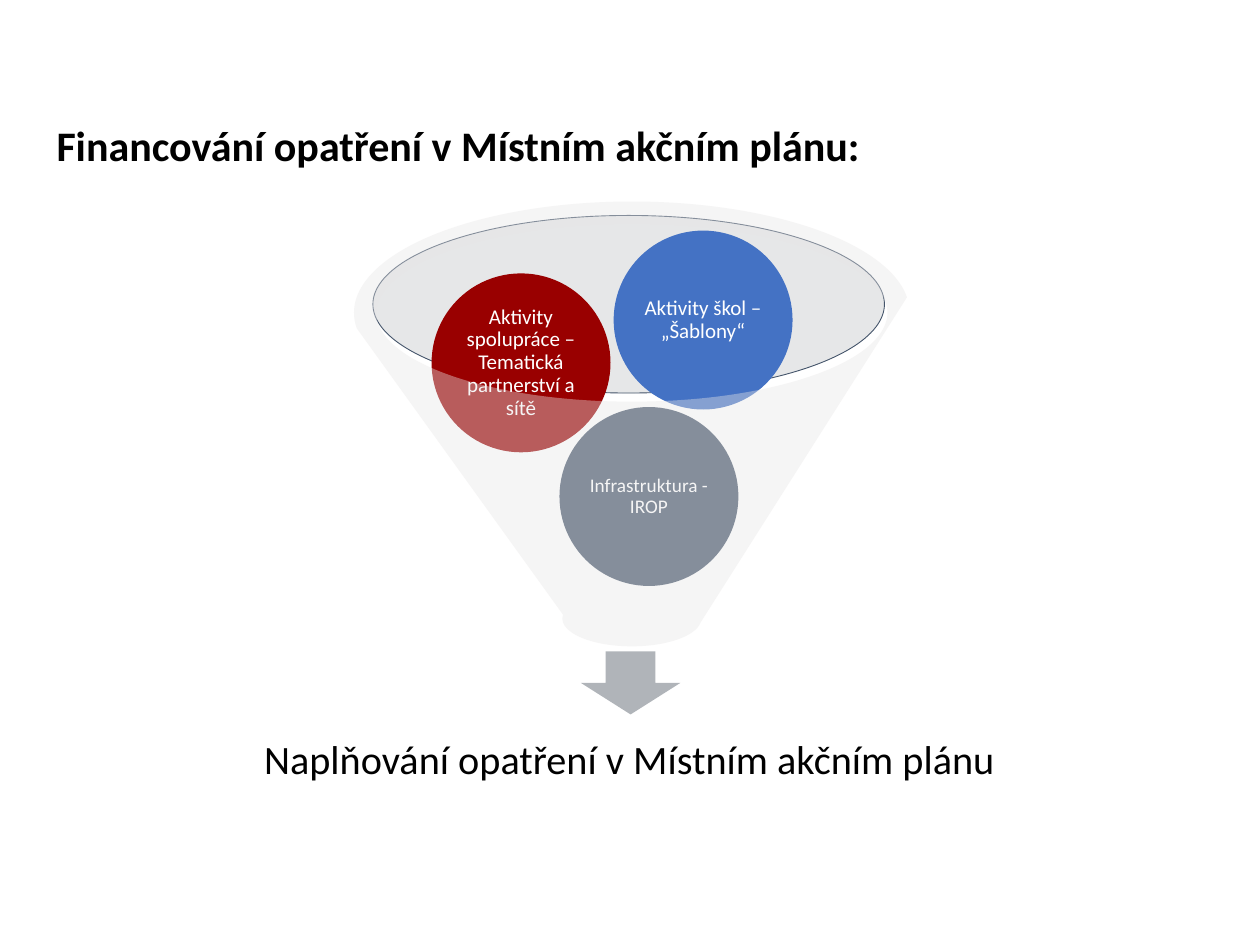
from dataclasses import dataclass

from lxml.etree import SubElement
from pptx import Presentation
from pptx.dml.color import RGBColor
from pptx.enum.shapes import MSO_SHAPE
from pptx.enum.text import MSO_ANCHOR, PP_ALIGN
from pptx.oxml.ns import qn
from pptx.shapes.autoshape import Shape
from pptx.slide import Slide
from pptx.util import Inches, Pt

WIDTH, HEIGHT = Inches(10), Inches(7.5)


@dataclass(frozen=True)
class Theme:
    font: str = "Calibri"
    ink: str = "000000"
    pale: str = "FFFFFF"
    rim: str = "C1C3C7"
    edge: str = "44546A"
    arrow: str = "B0B4B9"
    cone: str = "E7E6E6"
    title: int = 24
    result: int = 23


@dataclass(frozen=True)
class Box:
    """A place on the slide, in percent of its width and height."""
    left: float
    top: float
    width: float
    height: float

    def emu(self) -> tuple[int, int, int, int]:
        return (int(WIDTH * self.left / 100), int(HEIGHT * self.top / 100),
                int(WIDTH * self.width / 100), int(HEIGHT * self.height / 100))


@dataclass(frozen=True)
class Ball:
    text: str
    left: float
    top: float
    fill: str
    size: int


THEME = Theme()
BALL_WIDTH = 14.2
BALL_HEIGHT = BALL_WIDTH * WIDTH / HEIGHT
BALLS = [
    Ball("Infrastruktura - IROP", 44.4, 43.07, "44546A", 11),
    Ball("Aktivity spolupráce – Tematická partnerství a sítě",
         34.25, 28.93, "990000", 12),
    Ball("Aktivity škol – „Šablony“", 48.7, 24.4, "4472C4", 12),
]


def draw_shape(slide: Slide, kind: MSO_SHAPE, box: Box, fill: str,
               alpha: int = 100) -> Shape:
    """Add a shape without line or shadow; alpha is its opacity in percent."""
    shape = slide.shapes.add_shape(kind, *box.emu())
    shape.shadow.inherit = False
    shape.fill.solid()
    shape.fill.fore_color.rgb = RGBColor.from_string(fill)
    shape.line.fill.background()
    if alpha < 100:
        color = shape._element.spPr.find(qn("a:solidFill"))[0]
        SubElement(color, qn("a:alpha")).set("val", str(alpha * 1000))
    return shape


def set_text(shape: Shape, text: str, size: int, color: str,
             bold: bool = False) -> None:
    frame = shape.text_frame
    frame.word_wrap = True
    frame.text = text
    font = frame.paragraphs[0].runs[0].font
    font.name, font.size, font.bold = THEME.font, Pt(size), bold
    font.color.rgb = RGBColor.from_string(color)


def center(shape: Shape, inset: float) -> None:
    frame = shape.text_frame
    frame.vertical_anchor = MSO_ANCHOR.MIDDLE
    frame.margin_left = frame.margin_right = Inches(inset)
    frame.margin_top = frame.margin_bottom = Inches(inset)
    frame.paragraphs[0].alignment = PP_ALIGN.CENTER
    frame.paragraphs[0].line_spacing = 0.9


def draw_ball(slide: Slide, ball: Ball) -> None:
    box = Box(ball.left, ball.top, BALL_WIDTH, BALL_HEIGHT)
    shape = draw_shape(slide, MSO_SHAPE.OVAL, box, ball.fill)
    set_text(shape, ball.text, ball.size, THEME.pale)
    center(shape, 0.02)


def main() -> None:
    deck = Presentation()
    deck.slide_width, deck.slide_height = WIDTH, HEIGHT
    slide = deck.slides.add_slide(deck.slide_layouts[6])

    title = slide.shapes.add_textbox(*Box(3.5, 12, 92.9, 6.67).emu())
    set_text(title, "Financování opatření v Místním akčním plánu:",
             THEME.title, THEME.ink, bold=True)

    rim = draw_shape(slide, MSO_SHAPE.OVAL, Box(29.6, 22.8, 40.6, 18.8),
                     THEME.rim, alpha=40)
    rim.line.color.rgb = RGBColor.from_string(THEME.edge)
    rim.line.width = Pt(0.5)
    draw_shape(slide, MSO_SHAPE.DOWN_ARROW, Box(46.1, 68.93, 7.9, 6.67),
               THEME.arrow)

    result = slide.shapes.add_textbox(*Box(18.5, 74.27, 63, 12.53).emu())
    set_text(result, "Naplňování opatření v Místním akčním plánu",
             THEME.result, THEME.ink)
    center(result, 0.18)

    for ball in BALLS:
        draw_ball(slide, ball)
    draw_shape(slide, MSO_SHAPE.FUNNEL, Box(28.1, 21.33, 44.1, 47.07),
               THEME.cone, alpha=40)
    deck.save("out.pptx")


if __name__ == "__main__":
    main()
